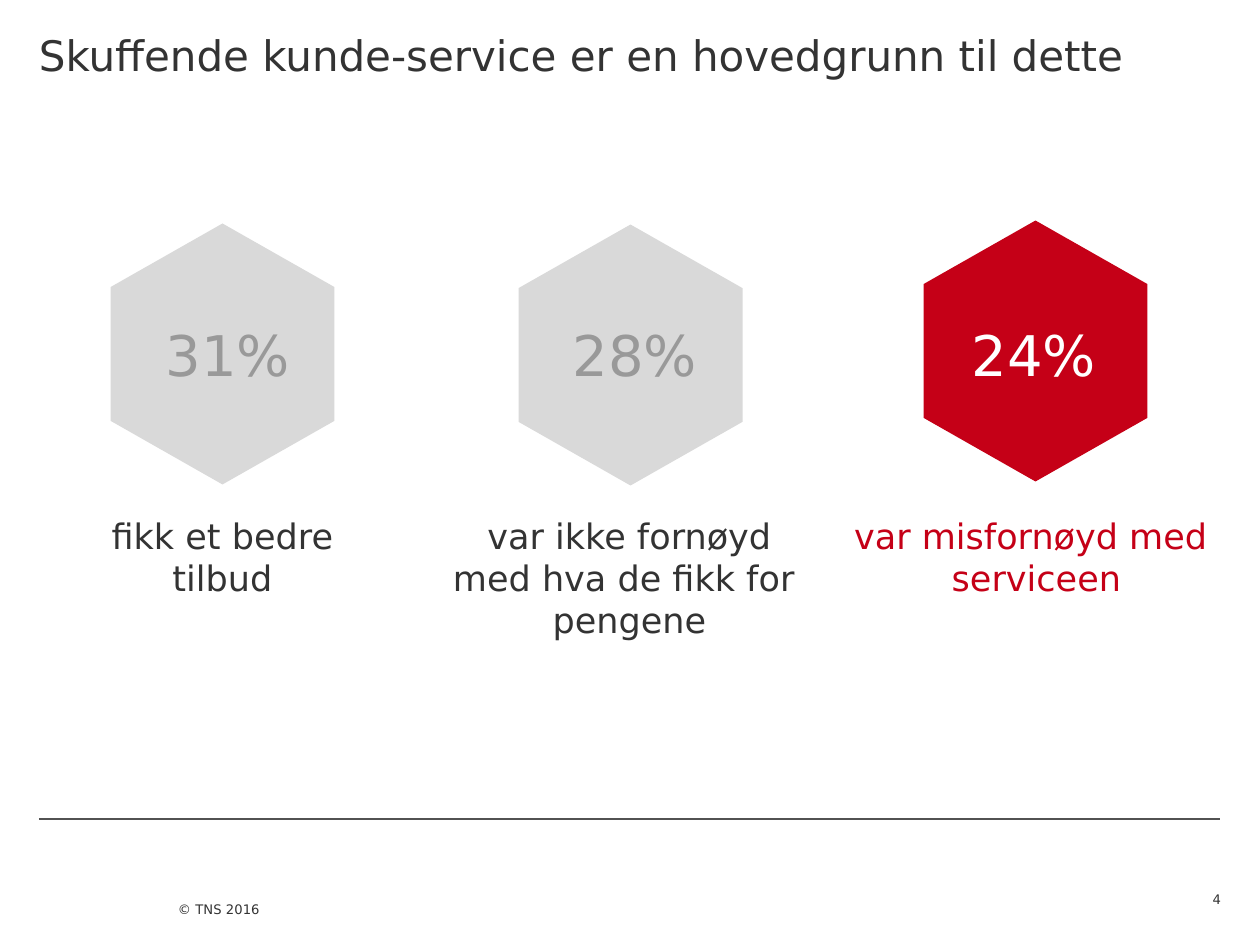
from lxml.etree import SubElement
from pptx import Presentation
from pptx.dml.color import RGBColor
from pptx.enum.shapes import MSO_CONNECTOR, MSO_SHAPE
from pptx.enum.text import MSO_ANCHOR, PP_ALIGN
from pptx.oxml.ns import qn
from pptx.util import Emu, Pt

DARK = RGBColor(0x33, 0x33, 0x33)
RULE = RGBColor(0x52, 0x52, 0x52)
GREY = RGBColor(0x99, 0x99, 0x99)
LIGHT = RGBColor(0xD9, 0xD9, 0xD9)
RED = RGBColor(0xC5, 0x00, 0x17)
WHITE = RGBColor(0xFF, 0xFF, 0xFF)

MARGIN = 39
COLUMN_STEP = 407
COLUMN_WIDTH = 367

REASONS = [
    ("31%", "fikk et bedre\ntilbud", (92, 242), 116, LIGHT, GREY, DARK),
    ("28%", "var ikke fornøyd\nmed hva de fikk for \npengene", (500, 243), 523, LIGHT, GREY, DARK),
    ("24%", "var misfornøyd med \nserviceen", (905, 239), 922, RED, WHITE, RED),
]


def px(n):
    return Emu(round(n * 914400 / 126))


def write(tf, text, size=20, color=DARK, align=PP_ALIGN.LEFT, font="DejaVu Sans"):
    p = tf.paragraphs[0]
    p.text = text
    p.alignment = align
    for r in p.runs:
        r.font.name = font
        r.font.size = Pt(size)
        r.font.color.rgb = color


class Deck:
    def __init__(self, width, height):
        self.prs = Presentation()
        self.prs.slide_width = px(width)
        self.prs.slide_height = px(height)
        self.s = self.prs.slides.add_slide(self.prs.slide_layouts[6])

    def text(self, x, y, w, h, text, top=0, bottom=0, anchor=MSO_ANCHOR.TOP, **fmt):
        tf = self.s.shapes.add_textbox(px(x), px(y), px(w), px(h)).text_frame
        tf.word_wrap = True
        tf.vertical_anchor = anchor
        tf.margin_left = tf.margin_right = 0
        tf.margin_top, tf.margin_bottom = px(top), px(bottom)
        write(tf, text, **fmt)

    def hexagon(self, x, y, w, h, color):
        sp = self.s.shapes.add_shape(MSO_SHAPE.HEXAGON, px(x), px(y), px(w), px(h))
        sp.adjustments[0] = 0.284
        sp.rotation = 90
        sp.shadow.inherit = False
        sp.fill.solid()
        sp.fill.fore_color.rgb = color
        sp.line.fill.background()

    def rule(self, x1, x2, y):
        line = self.s.shapes.add_connector(MSO_CONNECTOR.STRAIGHT, px(x1), px(y), px(x2), px(y))
        line.line.color.rgb = RULE
        line.line.width = Pt(0.75)
        SubElement(line._element.spPr, qn("a:effectLst"))


def main():
    deck = Deck(1260, 945)
    deck.rule(MARGIN, 1220, 819)
    deck.text(MARGIN, 0, 1181, 142, "Skuffende kunde-service er en hovedgrunn til dette", top=29, size=24)
    for i, (share, reason, (x, y), share_x, fill, share_color, color) in enumerate(REASONS):
        deck.text(MARGIN + i * COLUMN_STEP, 485, COLUMN_WIDTH, 117, reason,
                  top=29, color=color, align=PP_ALIGN.CENTER)
        deck.hexagon(x, y, 261, 224, fill)
        deck.text(share_x, 320, 224, 69, share, size=32, color=share_color, align=PP_ALIGN.CENTER)
    deck.text(178, 872, 350, 73, "© TNS 2016", bottom=39, anchor=MSO_ANCHOR.BOTTOM, size=7.5)
    deck.text(1152, 872, 69, 35, "4", anchor=MSO_ANCHOR.BOTTOM, size=7.5, align=PP_ALIGN.RIGHT)
    deck.prs.save("out.pptx")


if __name__ == "__main__":
    main()
